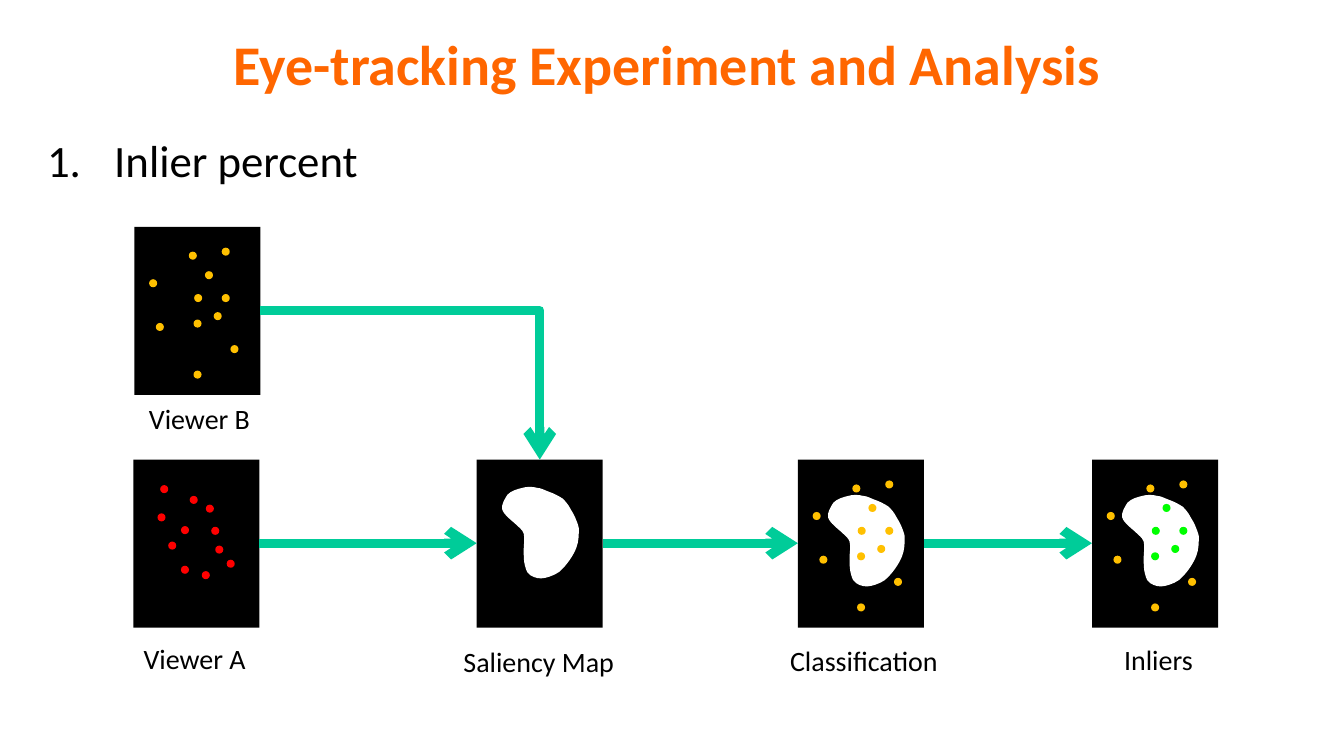
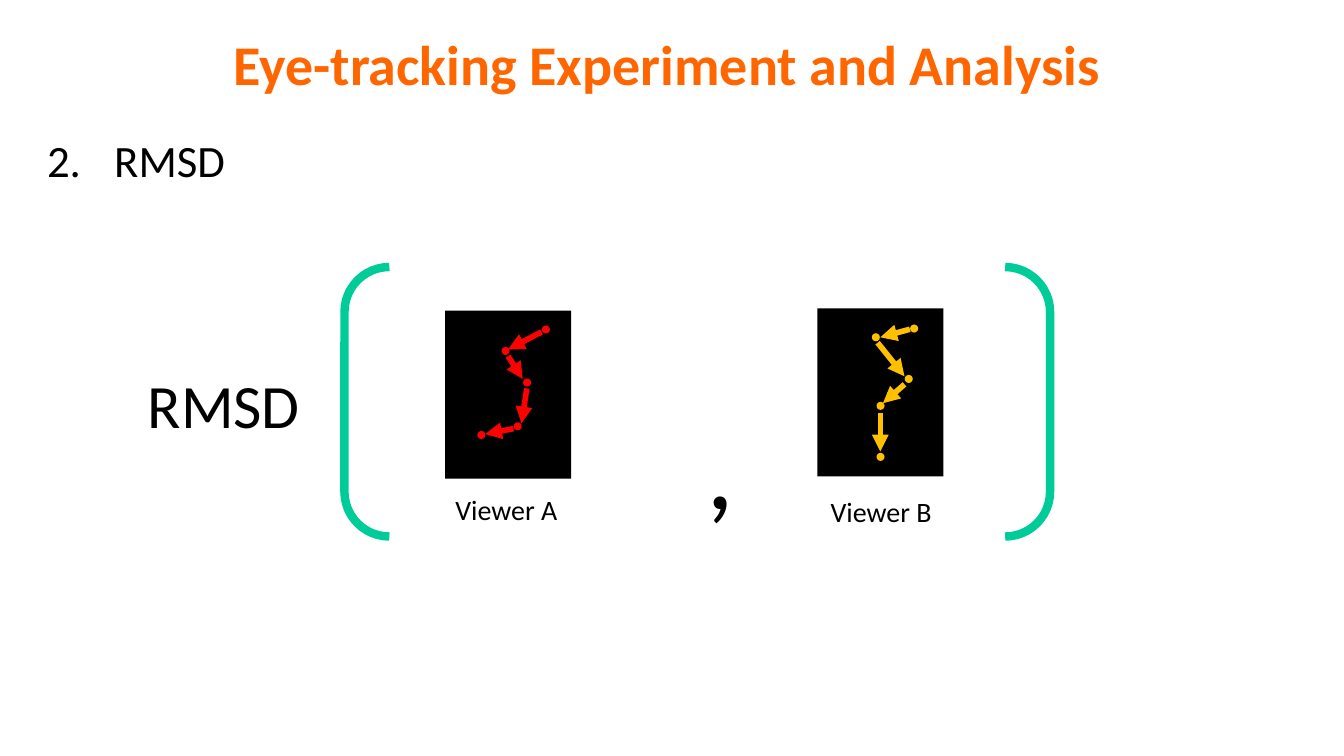
from lxml import etree
from pptx import Presentation
from pptx.dml.color import RGBColor
from pptx.enum.shapes import MSO_CONNECTOR, MSO_SHAPE
from pptx.enum.text import MSO_AUTO_SIZE, PP_ALIGN
from pptx.oxml.ns import qn
from pptx.util import Inches, Pt

RECTANGLE = MSO_SHAPE.RECTANGLE
OVAL = MSO_SHAPE.OVAL
BRACKETS = MSO_SHAPE.DOUBLE_BRACKET
STRAIGHT = MSO_CONNECTOR.STRAIGHT
ELBOW = MSO_CONNECTOR.ELBOW
NO_FIT = MSO_AUTO_SIZE.NONE
LEFT = PP_ALIGN.LEFT

CELL = Inches(0.1)
COLUMNS, ROWS = 100, 56.25
PANEL_WIDTH, PANEL_HEIGHT = 9.38, 12.5
DOT = 0.6
LABEL_HEIGHT = 3.5
FLOW_ROW = 40.42

COLORS = {
    "title": "FF6600",
    "text": "000000",
    "panel": "000000",
    "blob": "FFFFFF",
    "flow": "00CC99",
    "viewer_a": "FF0000",
    "viewer_b": "FFC000",
    "inlier": "00FF00",
}
FORMATS = {
    "title": {"name": "Calibri", "size": Pt(30), "bold": True},
    "item": {"name": "Calibri", "size": Pt(24), "bold": False},
    "label": {"name": "Calibri", "size": Pt(15)},
    "function": {"name": "Calibri", "size": Pt(33)},
    "comma": {"name": "Calibri", "size": Pt(60)},
}

DOTS_A = [(2, 1.9), (4.2, 2.7), (5.4, 3.35), (5.8, 5), (3.55, 4.95), (6.1, 6.4),
          (2.6, 6.1), (1.8, 4), (5.1, 8.3), (3.55, 7.9), (6.95, 7.45)]
OUTLIERS_B = [(4.05, 1.85), (6.5, 1.55), (1.6, 7.15), (1.1, 3.9), (4.4, 10.7), (7.15, 8.8)]
INLIERS_B = [(5.25, 3.3), (6.5, 5), (4.45, 5), (5.9, 6.35), (4.4, 6.9)]
PATH_A = [(7.2, 1.1), (4.2, 2.7), (5.8, 5.05), (5.1, 8.3), (2.4, 8.95)]
PATH_B = [(4.05, 1.85), (6.9, 1.2), (6.5, 4.95), (4.4, 10.75), (4.4, 6.95)]

BLOB_WIDTH, BLOB_HEIGHT = 5.7, 6.8
BLOB_START = (0.4, 0.6)
BLOB_CURVES = [
    (0.7, 0.3, 1.1, 0.2, 1.5, 0.1), (1.8, 0, 2.3, 0, 2.6, 0.1),
    (2.9, 0.1, 3.2, 0.3, 3.5, 0.4), (3.8, 0.5, 4.2, 0.7, 4.5, 0.9),
    (4.7, 1.1, 4.9, 1.3, 5.1, 1.7), (5.3, 2, 5.6, 2.6, 5.7, 3.1),
    (5.7, 3.6, 5.7, 4.1, 5.5, 4.6), (5.3, 5.1, 4.9, 5.7, 4.5, 6.1),
    (4.2, 6.5, 3.6, 6.7, 3.2, 6.8), (2.8, 6.9, 2.4, 6.8, 2.1, 6.6),
    (1.9, 6.5, 1.8, 6.3, 1.7, 5.9), (1.6, 5.6, 1.6, 5.1, 1.6, 4.7),
    (1.6, 4.3, 1.7, 3.9, 1.6, 3.5), (1.5, 3.2, 1.2, 3, 1, 2.8),
    (0.8, 2.6, 0.1, 2.1, 0, 1.7), (-0.1, 1.4, 0.2, 0.9, 0.4, 0.6),
]

SLIDES = [
    {
        "item": "Inlier percent",
        "panels": [
            (9.92, 34.2, None, {"viewer_a": DOTS_A}),
            (35.47, 34.2, (1.9, 2), {}),
            (10, 16.88, None, {"viewer_b": OUTLIERS_B + INLIERS_B}),
            (81.25, 34.2, (2.25, 2.6), {"viewer_b": OUTLIERS_B, "inlier": INLIERS_B}),
            (59.37, 34.2, (2.25, 2.6), {"viewer_b": OUTLIERS_B + INLIERS_B}),
        ],
        "labels": [
            ("Viewer A", "label", 9.7, 47.25, 9.7, LABEL_HEIGHT),
            ("Saliency Map", "label", 33.5, 47.5, 13.3, LABEL_HEIGHT),
            ("Viewer B", "label", 10.1, 29.4, 9.6, LABEL_HEIGHT),
            ("Inliers", "label", 82.65, 47.3, 7.2, LABEL_HEIGHT),
            ("Classification", "label", 57.8, 47.4, 13.2, LABEL_HEIGHT),
        ],
        "arrows": [
            ("flow", 5, "arrow", STRAIGHT, [
                (19.3, FLOW_ROW, 35.47, FLOW_ROW),
                (44.84, FLOW_ROW, 59.37, FLOW_ROW),
                (68.75, FLOW_ROW, 81.25, FLOW_ROW),
            ]),
            ("flow", 5, "arrow", ELBOW, [(19.37, 23.1, 40.16, 34.2)]),
        ],
    },
    {
        "item": "RMSD",
        "brackets": (25.63, 19.87, 52.5, 20.05),
        "panels": [
            (33.12, 23.12, None, {"viewer_a": PATH_A}),
            (60.82, 22.95, None, {"viewer_b": PATH_B}),
        ],
        "labels": [
            ("RMSD", "function", 10, 26.8, 13.8, 6.6),
            (",", "comma", 51.6, 29.1, 2.5, 11.1),
            ("Viewer A", "label", 32.9, 36.15, 9.7, LABEL_HEIGHT),
            ("Viewer B", "label", 60.82, 36.3, 9.6, LABEL_HEIGHT),
        ],
        "arrows": [
            ("viewer_a", 3, "triangle", STRAIGHT, [
                (40.3, 24.7, 37.8, 26), (37.8, 26.5, 38.9, 28.2),
                (39.2, 28.9, 38.8, 31.5), (38.2, 31.9, 36.1, 32.3),
            ]),
            ("viewer_b", 3, "triangle", STRAIGHT, [
                (67.7, 24.5, 65.5, 25.1), (65.3, 25.5, 67.3, 28),
                (67.3, 28.6, 65.7, 30), (65.5, 30.7, 65.5, 33.6),
            ]),
        ],
    },
]


def write_text(box, text, style, color, area, wrap):
    box.left, box.top, box.width, box.height = [round(n * CELL) for n in area]
    frame = box.text_frame
    frame.word_wrap = wrap
    frame.auto_size = NO_FIT
    para = frame.paragraphs[0]
    para.alignment = LEFT
    para.space_before = Pt(0)
    span = para.add_run()
    span.text = text
    for attribute, value in FORMATS[style].items():
        setattr(span.font, attribute, value)
    span.font.color.rgb = RGBColor.from_string(COLORS[color])
    return para


def paint(shape, color):
    shape.shadow.inherit = False
    shape.fill.solid()
    shape.fill.fore_color.rgb = RGBColor.from_string(COLORS[color])
    shape.line.fill.background()


deck = Presentation()
deck.slide_width = round(COLUMNS * CELL)
deck.slide_height = round(ROWS * CELL)

for number, content in enumerate(SLIDES, start=1):
    page = deck.slides.add_slide(deck.slide_layouts[1])
    title, body = page.placeholders
    write_text(title, "Eye-tracking Experiment and Analysis", "title", "title",
               (16.4, 1.65, 67.1, 6.1), False)
    para = write_text(body, content["item"], "item", "text", (2.5, 9.4, 96.5, 5), True)
    properties = para._p.get_or_add_pPr()
    properties.set("marL", str(5 * CELL))
    properties.set("indent", str(-5 * CELL))
    bullet = etree.SubElement(properties, qn("a:buAutoNum"))
    bullet.set("type", "arabicPeriod")
    bullet.set("startAt", str(number))

    if "brackets" in content:
        brackets = page.shapes.add_shape(
            BRACKETS, *[round(n * CELL) for n in content["brackets"]])
        brackets.shadow.inherit = False
        brackets.fill.background()
        brackets.line.color.rgb = RGBColor.from_string(COLORS["flow"])
        brackets.line.width = Pt(4.5)

    for left, top, blob_offset, dots in content["panels"]:
        panel = page.shapes.add_group_shape()
        area = (left, top, PANEL_WIDTH, PANEL_HEIGHT)
        paint(panel.shapes.add_shape(RECTANGLE, *[round(n * CELL) for n in area]), "panel")
        if blob_offset:
            across, down = left + blob_offset[0], top + blob_offset[1]
            start, *corners = [
                (round((x + across) * CELL), round((y + down) * CELL))
                for x, y in (BLOB_START, (0, 0), (BLOB_WIDTH, BLOB_HEIGHT))
            ]
            builder = panel.shapes.build_freeform(*start)
            builder.add_line_segments(corners, close=True)
            blob = builder.convert_to_shape()
            paint(blob, "blob")
            outline = next(blob.element.iter(qn("a:path")))
            for segment in outline.findall(qn("a:lnTo")):
                outline.remove(segment)
            close = outline.find(qn("a:close"))
            for curve in BLOB_CURVES:
                bezier = etree.Element(qn("a:cubicBezTo"))
                close.addprevious(bezier)
                for x, y in zip(curve[::2], curve[1::2]):
                    point = etree.SubElement(bezier, qn("a:pt"))
                    point.set("x", str(round(x * CELL)))
                    point.set("y", str(round(y * CELL)))
        for color, positions in dots.items():
            for x, y in positions:
                area = (left + x, top + y, DOT, DOT)
                paint(panel.shapes.add_shape(OVAL, *[round(n * CELL) for n in area]), color)

    for text, style, *area in content["labels"]:
        box = page.shapes.add_textbox(0, 0, CELL, CELL)
        write_text(box, text, style, "text", area, style != "label")

    for color, width, head, kind, segments in content["arrows"]:
        for segment in segments:
            arrow = page.shapes.add_connector(kind, *[round(n * CELL) for n in segment])
            arrow.line.color.rgb = RGBColor.from_string(COLORS[color])
            arrow.line.width = Pt(width)
            shape_properties = arrow.element.spPr
            if kind == ELBOW:
                shape_properties.find(qn("a:prstGeom")).set("prst", "bentConnector2")
            line = shape_properties.find(qn("a:ln"))
            etree.SubElement(line, qn("a:tailEnd")).set("type", head)
            etree.SubElement(shape_properties, qn("a:effectLst"))

deck.save("out.pptx")
